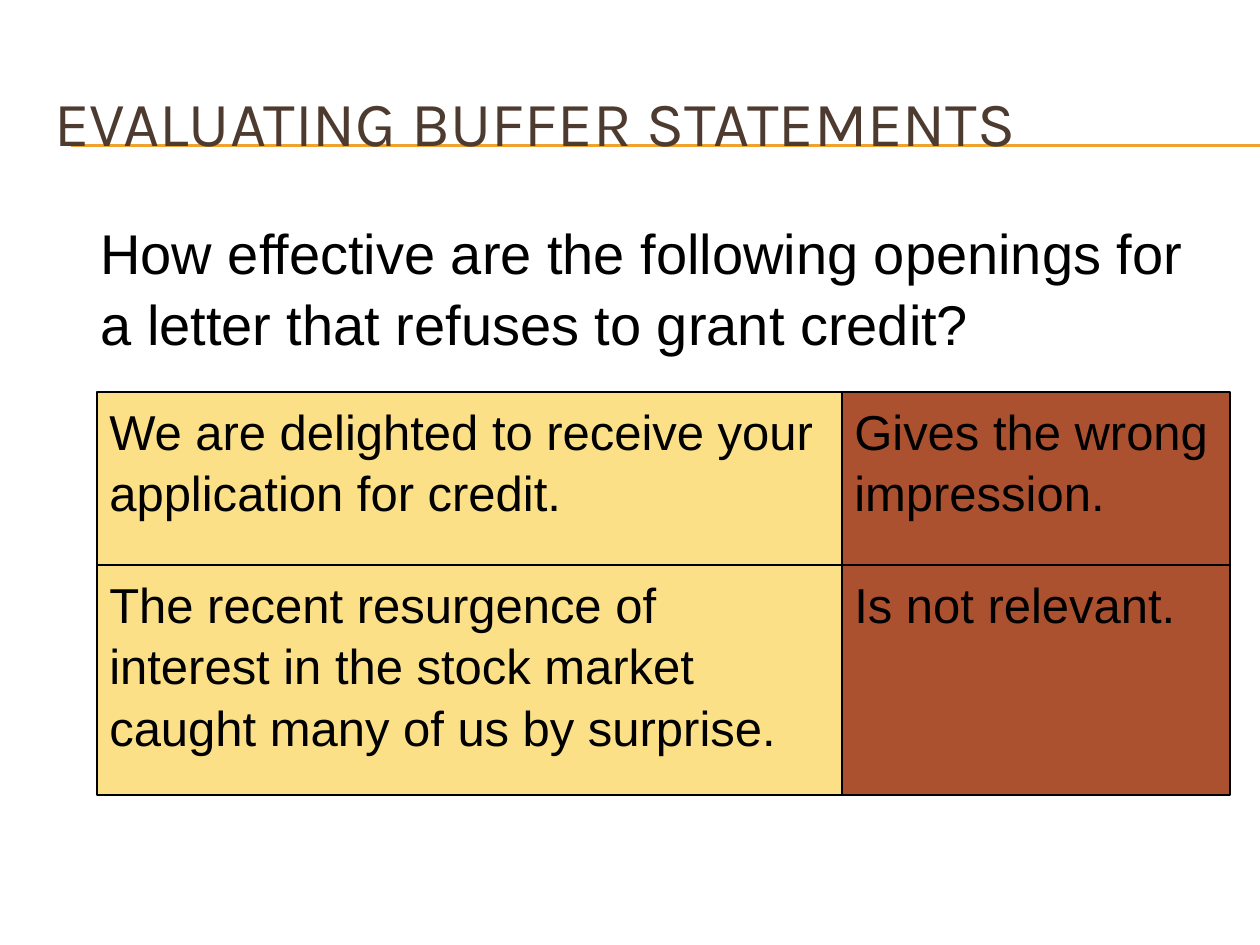
from lxml import etree
from pptx import Presentation
from pptx import util as u
from pptx.dml.color import RGBColor
from pptx.enum import shapes, text
from pptx.oxml.ns import qn

PX = u.Inches(1) / 126  # EMU in one px
COLORS = {
    "accent": "F0A22E",
    "title": "4E3B30",
    "ink": "000000",
    "opening": "FCE088",
    "verdict": "AC512F",
}
ROWS = [  # top, height, opening, verdict
    (392, 173, "We are delighted to receive your application for credit.",
     "Gives the wrong impression."),
    (565, 230, "The recent resurgence of interest in the stock market "
     "caught many of us by surprise.", "Is not relevant."),
]
COLUMNS = [(97, 745, "opening"), (842, 388, "verdict")]  # left, width, fill


def px(*lengths):
    return [u.Emu(round(n * PX)) for n in lengths]


def rgb(name):
    return RGBColor.from_string(COLORS[name])


def write(tf, words, size, font="Arial", color="ink", spacing=1.05,
          anchor=text.MSO_ANCHOR.TOP):
    tf.text = words
    tf.word_wrap = True
    tf.vertical_anchor = anchor
    p = tf.paragraphs[0]
    p.alignment = text.PP_ALIGN.LEFT
    p.line_spacing = spacing
    r = p.runs[0]
    r.font.size = u.Pt(size)
    r.font.name = font
    r.font.color.rgb = rgb(color)


def add_rule(s, y):
    x1, x2, y = px(71, 1260, y)
    line = s.shapes.add_connector(shapes.MSO_CONNECTOR.STRAIGHT, x1, y, x2, y)
    line.line.color.rgb = rgb("accent")
    line.line.width = u.Pt(0.75)
    etree.SubElement(line._element.spPr, qn("a:effectLst"))


def add_title(s, words):
    title = s.shapes.title
    title.left, title.top, title.width, title.height = px(42, 63, 1197, 116)
    write(title.text_frame, words, 36, "Karla", "title", 1.0,
          text.MSO_ANCHOR.MIDDLE)
    s.shapes._spTree.append(title._element)  # in front of the rules


def add_question(s, words):
    box = s.shapes.add_textbox(*px(88, 209, 1135, 147))
    write(box.text_frame, words, 32)
    box.text_frame.auto_size = text.MSO_AUTO_SIZE.SHAPE_TO_FIT_TEXT


def add_cell(s, left, top, width, height, fill, words):
    sp = s.shapes.add_shape(shapes.MSO_SHAPE.RECTANGLE,
                            *px(left, top, width, height))
    sp.shadow.inherit = False
    sp.fill.solid()
    sp.fill.fore_color.rgb = rgb(fill)
    sp.line.color.rgb = rgb("ink")
    sp.line.width = u.Pt(1.25)
    write(sp.text_frame, words, 28)


def main():
    prs = Presentation()
    prs.slide_width, prs.slide_height = px(1260, 945)
    s = prs.slides.add_slide(prs.slide_layouts[5])  # title only

    # Double rule under the title
    for y in (145, 146):
        add_rule(s, y)

    # Openings and verdicts
    for top, height, *row in ROWS:
        for (left, width, fill), words in zip(COLUMNS, row):
            add_cell(s, left, top, width, height, fill, words)

    # Question and title
    add_question(s, "How effective are the following openings for a letter "
                 "that refuses to grant credit?")
    add_title(s, "EVALUATING BUFFER STATEMENTS")

    prs.save("out.pptx")


if __name__ == "__main__":
    main()
